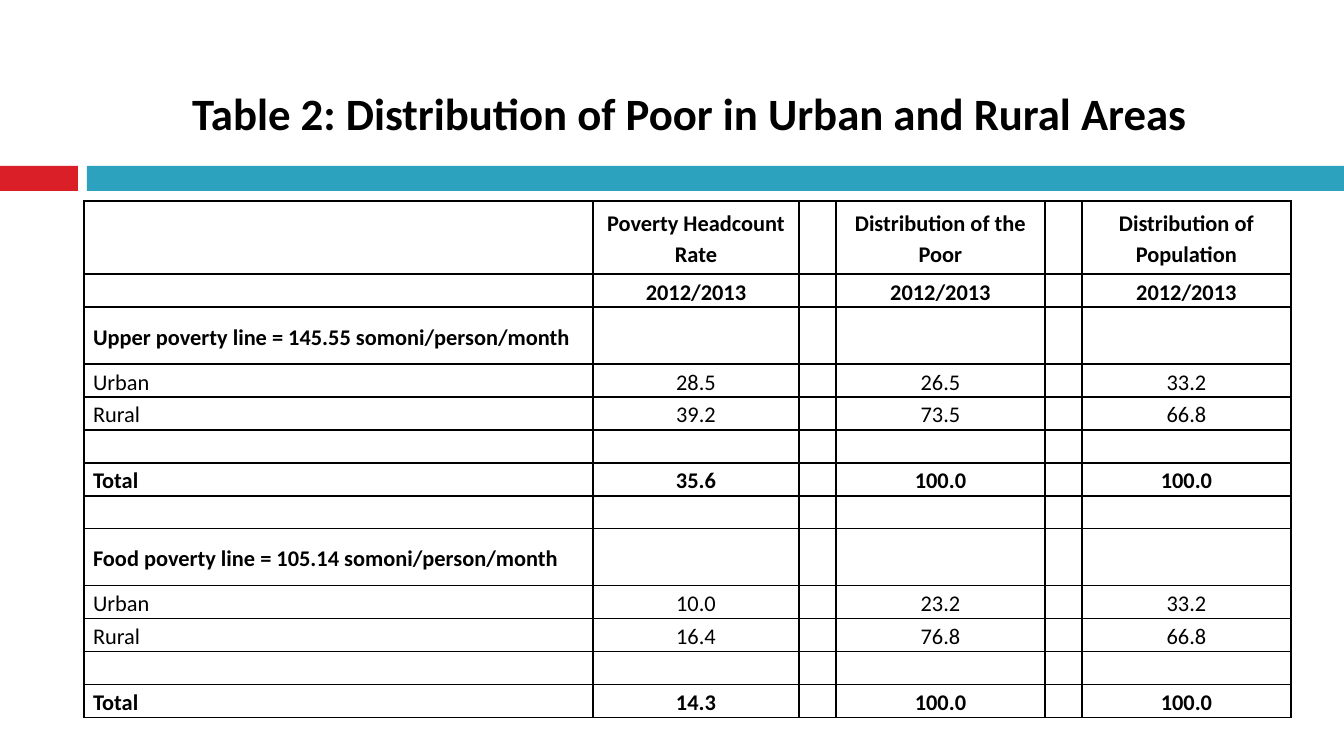
from lxml.etree import SubElement
from pptx import Presentation
from pptx.dml.color import RGBColor
from pptx.enum.shapes import MSO_SHAPE as Shape
from pptx.enum.text import MSO_ANCHOR as Anchor, MSO_AUTO_SIZE as AutoSize, PP_ALIGN as Align
from pptx.oxml.ns import qn
from pptx.util import Pt

PX = 6804
FONT, BLACK = "Calibri", "000000"
TITLE = "Table 2: Distribution of Poor in Urban and Rural Areas"
TITLE_BOX = (90, 17, 1199, 129)
BARS = [((0, 166, 78, 25), "DA1F28"), ((87, 166, 1257, 25), "2DA2BF")]

TABLE_LEFT, TABLE_TOP = 84, 168
COLUMNS = [509, 206, 37, 209, 37, 209]
VALUE_COLUMNS = [1, 3, 5]
PLAIN, HEADER, SECTION = 33, 73, 57
ROWS = [
    (PLAIN, False, "", []),
    (HEADER, True, "", ["Poverty Headcount Rate", "Distribution of the Poor",
                        "Distribution of Population"]),
    (PLAIN, True, "", ["2012/2013"] * 3),
    (SECTION, True, "Upper poverty line = 145.55 somoni/person/month", []),
    (PLAIN, False, "Urban", ["28.5", "26.5", "33.2"]),
    (PLAIN, False, "Rural", ["39.2", "73.5", "66.8"]),
    (PLAIN, False, "", []),
    (PLAIN, True, "Total", ["35.6", "100.0", "100.0"]),
    (PLAIN, False, "", []),
    (SECTION, True, "Food poverty line = 105.14 somoni/person/month", []),
    (PLAIN, False, "Urban", ["10.0", "23.2", "33.2"]),
    (PLAIN, False, "Rural", ["16.4", "76.8", "66.8"]),
    (PLAIN, False, "", []),
    (PLAIN, True, "Total", ["14.3", "100.0", "100.0"]),
]


def emu(*lengths):
    return [length * PX for length in lengths]


def color(code):
    return RGBColor.from_string(code)


def set_font(paragraph, size, bold):
    font = paragraph.font
    font.name, font.size, font.bold = FONT, Pt(size), bold
    font.color.rgb = color(BLACK)


def set_borders(cell, visible):
    properties = cell._tc.get_or_add_tcPr()
    for side in "LRTB":
        line = SubElement(properties, qn(f"a:ln{side}"), w=str(Pt(1)))
        if side in visible:
            fill = SubElement(line, qn("a:solidFill"))
            SubElement(fill, qn("a:srgbClr"), val=BLACK)
        else:
            SubElement(line, qn("a:noFill"))


def fill_cell(cell, text, bold, align, borders):
    set_borders(cell, borders)
    cell.fill.background()
    cell.vertical_anchor = Anchor.MIDDLE
    cell.margin_left = cell.margin_right = 9 * PX
    cell.margin_top = cell.margin_bottom = 0
    paragraph = cell.text_frame.paragraphs[0]
    paragraph.alignment, paragraph.line_spacing = align, 1.15
    if text:
        paragraph.text = text
    set_font(paragraph, 12, bold)
    paragraph._p.get_or_add_endParaRPr().set("sz", "1200")


prs = Presentation()
prs.slide_width, prs.slide_height = emu(1344, 756)
slide = prs.slides.add_slide(prs.slide_layouts[5])

title = slide.shapes.title
title.left, title.top, title.width, title.height = emu(*TITLE_BOX)
title.text_frame.text = TITLE
title.text_frame.auto_size = AutoSize.NONE
title.text_frame.vertical_anchor = Anchor.BOTTOM
heading = title.text_frame.paragraphs[0]
heading.alignment = Align.CENTER
set_font(heading, 24, True)

for box, code in BARS:
    bar = slide.shapes.add_shape(Shape.RECTANGLE, *emu(*box))
    bar.shadow.inherit = False
    bar.fill.solid()
    bar.fill.fore_color.rgb = color(code)
    bar.line.fill.background()

table_height = sum(height for height, *_ in ROWS)
poverty = slide.shapes.add_table(
    len(ROWS), len(COLUMNS),
    *emu(TABLE_LEFT, TABLE_TOP, sum(COLUMNS), table_height)).table
poverty.first_row = poverty.horz_banding = False
for column, width in zip(poverty.columns, COLUMNS):
    column.width = width * PX

for r, (height, bold, label, values) in enumerate(ROWS):
    poverty.rows[r].height = height * PX
    texts = {0: label, **dict(zip(VALUE_COLUMNS, values))}
    for c in range(len(COLUMNS)):
        fill_cell(poverty.cell(r, c), texts.get(c, ""), bold,
                  Align.CENTER if c else Align.LEFT, "LRTB" if r else "B")
poverty.cell(0, 0).merge(poverty.cell(0, len(COLUMNS) - 1))

prs.save("out.pptx")
